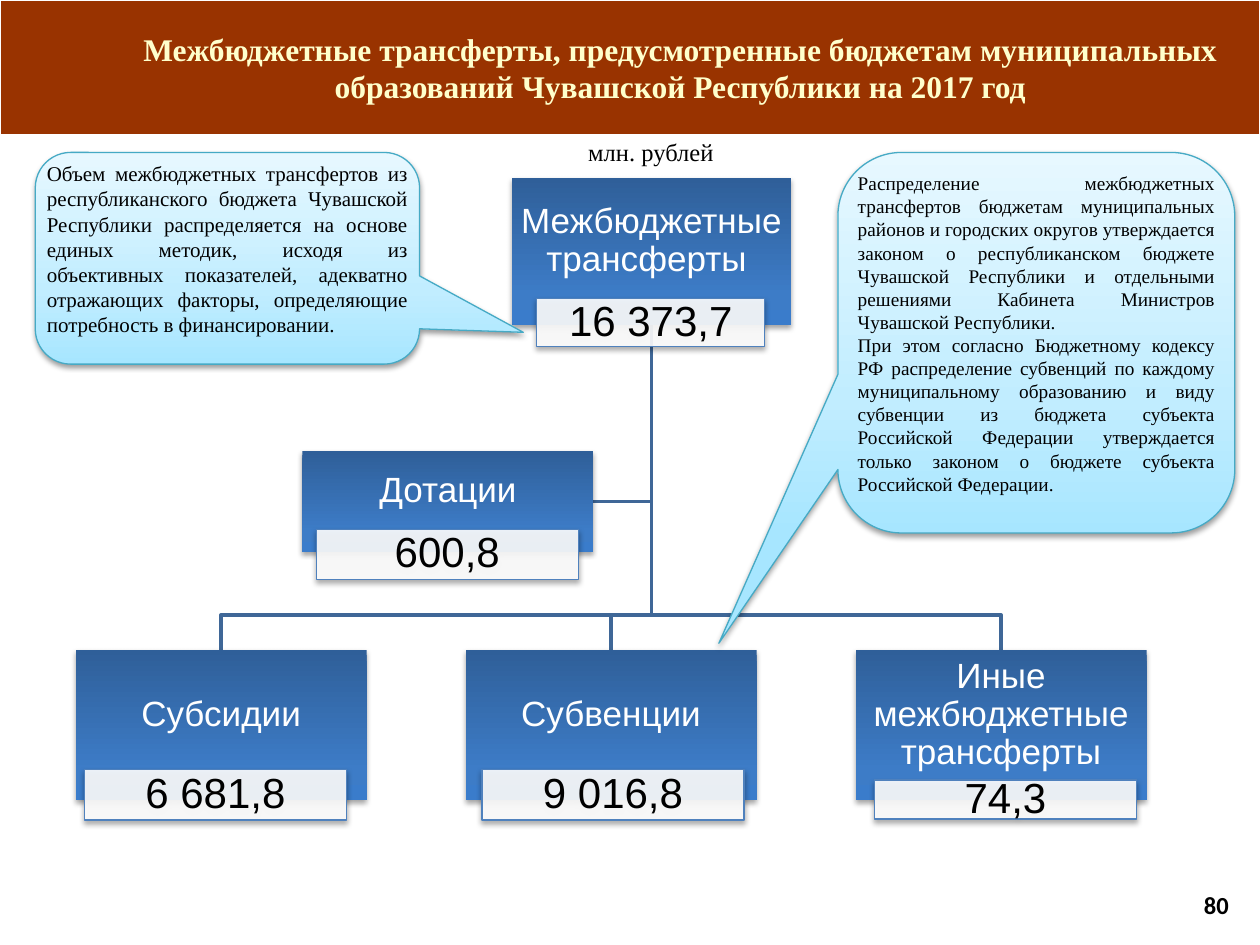
from lxml.etree import SubElement
from pptx import Presentation
from pptx.dml.color import RGBColor
from pptx.enum.shapes import MSO_SHAPE as SHAPE
from pptx.enum.text import MSO_ANCHOR as ANCHOR, PP_ALIGN as ALIGN
from pptx.oxml.ns import qn
from pptx.util import Inches, Pt

# Grid: 100 columns by 75 rows on a slide of 10 by 7.5 inches
COLS, ROWS = 100, 75
WIDE, HIGH = Inches(10), Inches(7.5)

HUE = {
    "band": "993300", "title": "FFFFCC", "white": "FFFFFF", "black": "000000",
    "link": "3F6797", "plate": "4F81BD", "edge": "46AAC5",
}
NODE = [(0, "2F5F99"), (80, "3D7CC7"), (100, "3A7CCB")]
CLOUD = [(0, "A7E6FF"), (35, "C1EDFF"), (100, "E7F8FF")]
SERIF, SANS = "Times New Roman", "Arial"

LEFT = ["Объем межбюджетных трансфертов из республиканского бюджета Чувашской "
        "Республики распределяется на основе единых методик, исходя из объективных "
        "показателей, адекватно отражающих факторы, определяющие потребность в "
        "финансировании."]
RIGHT = ["Распределение межбюджетных трансфертов бюджетам муниципальных районов и "
         "городских округов утверждается законом о республиканском бюджете Чувашской "
         "Республики и отдельными решениями Кабинета Министров Чувашской Республики.",
         "При этом согласно Бюджетному кодексу РФ распределение субвенций по каждому "
         "муниципальному образованию и виду субвенции из бюджета субъекта Российской "
         "Федерации утверждается только законом о бюджете субъекта Российской "
         "Федерации."]

# Label, figure, box, and plate with its corner measured from the box
ROOT = ("Межбюджетные трансферты ", "16 373,7", (40.6, 14.1, 22.2, 11.7), (2, 9.6, 18.1, 3.8))
SIDE = ("Дотации", "600,8", (24, 35.8, 23.1, 8), (1.1, 6.2, 20.8, 4))
STEP = 30.95
LEAVES = [
    (label, sum_, (6 + STEP * i, 51.6, 23.1, 11.9), plate)
    for i, (label, sum_, plate) in enumerate([
        ("Субсидии", "6 681,8", (0.7, 9.5, 20.8, 4)),
        ("Субвенции", "9 016,8", (1.3, 9.5, 20.8, 4)),
        ("Иные межбюджетные трансферты", "74,3", (1.5, 10.3, 20.8, 3.1)),
    ])
]


def col(n):
    return round(WIDE * n / COLS)


def row(n):
    return round(HIGH * n / ROWS)


def rgb(name):
    return RGBColor.from_string(HUE[name])


def span(box):
    x, y, w, h = box
    return col(x), row(y), col(w), row(h)


def write(shape, texts, font, align, inset=(0.1, 0.05, 0.1, 0.05),
          anchor=ANCHOR.MIDDLE, wrap=True, gap=None):
    """Fill a shape with paragraphs; font is (name, size, hue, bold)."""
    frame = shape.text_frame
    left, top, right, low = map(Inches, inset)
    look = {"margin_left": left, "margin_top": top, "margin_right": right,
            "margin_bottom": low, "vertical_anchor": anchor, "word_wrap": wrap}
    for key, val in look.items():
        setattr(frame, key, val)
    name, size, hue, bold = font
    for i, text in enumerate(texts):
        para = frame.add_paragraph() if i else frame.paragraphs[0]
        para.alignment, para.line_spacing = align, gap
        run = para.add_run()
        run.text = text
        for key, val in {"name": name, "size": Pt(size), "bold": bold}.items():
            setattr(run.font, key, val)
        run.font.color.rgb = rgb(hue)


def shade(shape, stops, turn):
    """Give a shape a linear gradient, turned clockwise in degrees."""
    shape.fill.gradient()
    grad = shape._element.spPr.find(qn("a:gradFill"))
    grad.clear()
    group = SubElement(grad, qn("a:gsLst"))
    for pos, tone in stops:
        stop = SubElement(group, qn("a:gs"), pos=str(pos * 1000))
        SubElement(stop, qn("a:srgbClr"), val=tone)
    SubElement(grad, qn("a:lin"), ang=str(turn * 60000), scaled="0")


def drop(shape, dist, dense):
    """Add a soft shadow below; dense is its opacity in percent."""
    cast = SubElement(shape._element.spPr.find(qn("a:effectLst")), qn("a:outerShdw"),
                      blurRad=str(Pt(3.1)), dist=str(Pt(dist)), dir="5400000",
                      rotWithShape="0")
    tone = SubElement(cast, qn("a:srgbClr"), val=HUE["black"])
    SubElement(tone, qn("a:alpha"), val=str(dense * 1000))


def block(slide, kind, box, fill=None, line=None):
    shape = slide.shapes.add_shape(kind, *span(box))
    shape.shadow.inherit = False
    if fill:
        shape.fill.solid()
        shape.fill.fore_color.rgb = rgb(fill)
    if line:
        shape.line.color.rgb = rgb(line)
        shape.line.width = Pt(0.75)
    else:
        shape.line.fill.background()
    return shape


def head(slide, box):
    block(slide, SHAPE.RECTANGLE, box, "band", "white")
    x, y, w, h = box
    text = slide.shapes.add_textbox(*span((x + 0.091 * w, y, 0.898 * w, h)))
    write(text, ["Межбюджетные трансферты, предусмотренные бюджетам муниципальных "
                 "образований Чувашской Республики на 2017 год"],
          (SERIF, 18, "title", True), ALIGN.CENTER)


def note(slide, box, texts, size, tip, wrap=True):
    """Place a callout whose tip is given as shares of its box."""
    shape = block(slide, SHAPE.ROUNDED_RECTANGULAR_CALLOUT, box, line="edge")
    for i, val in enumerate((*tip, 0.167)):
        shape.adjustments[i] = val
    shade(shape, CLOUD, 270)
    drop(shape, 1.6, 38)
    write(shape, texts, (SERIF, size, "black", False), ALIGN.JUSTIFY,
          (0.01, 0.01, 0.01, 0.16))


def node(slide, label, sum_, box, plate):
    base = block(slide, SHAPE.RECTANGLE, box)
    shade(base, NODE, 90)
    drop(base, 1.8, 35)
    write(base, [label], (SANS, 20, "white", False), ALIGN.CENTER,
          (0.01, 0.01, 0.01, 0.17), gap=0.9)
    dx, dy, w, h = plate
    card = block(slide, SHAPE.RECTANGLE, (box[0] + dx, box[1] + dy, w, h), "white", "plate")
    tone = card._element.spPr.find(qn("a:solidFill"))[0]
    SubElement(tone, qn("a:alpha"), val="90000")
    drop(card, 1.8, 35)
    write(card, [sum_], (SANS, 24, "black", False), ALIGN.CENTER,
          (0.07, 0.02, 0.07, 0.02), gap=0.9)


def link(slide, *spots):
    first, *rest = [(col(x), row(y)) for x, y in spots]
    pen = slide.shapes.build_freeform(*first)
    pen.add_line_segments(rest, close=False)
    shape = pen.convert_to_shape()
    shape.shadow.inherit = False
    shape.fill.background()
    shape.line.color.rgb = rgb("link")
    shape.line.width = Pt(2)


def tree(slide):
    x, y, w, h = ROOT[2]
    mid, low = x + w / 2, y + h
    x, y, w, h = SIDE[2]
    link(slide, (mid, low), (mid, y + h / 2), (x + w, y + h / 2))
    for leaf in LEAVES:
        x, y, w, h = leaf[2]
        bus, end = y - 2.8, x + w / 2
        link(slide, (mid, low), (mid, bus), (end, bus), (end, y))
    for part in (ROOT, *LEAVES, SIDE):
        node(slide, *part)


def label(slide, box, text, font, align, **look):
    write(slide.shapes.add_textbox(*span(box)), [text], font, align, **look)


def main():
    deck = Presentation()
    deck.slide_width, deck.slide_height = WIDE, HIGH
    slide = deck.slides.add_slide(deck.slide_layouts[6])
    head(slide, (0, 0, COLS, 10.7))
    tree(slide)
    label(slide, (45.7, 10.4, 12.1, 3.4), "млн. рублей", (SERIF, 14, "black", False),
          ALIGN.LEFT, anchor=ANCHOR.TOP, wrap=False)
    note(slide, (66.5, 12.1, 31.5, 30.2), RIGHT, 11, (-0.8, 0.79))
    note(slide, (2.8, 12.1, 30.5, 16.8), LEFT, 12, (0.77, 0.35))
    label(slide, (87, 69.8, 11.5, 4), "80", ("Calibri", 14, "black", True), ALIGN.RIGHT)
    deck.save("out.pptx")


if __name__ == "__main__":
    main()
